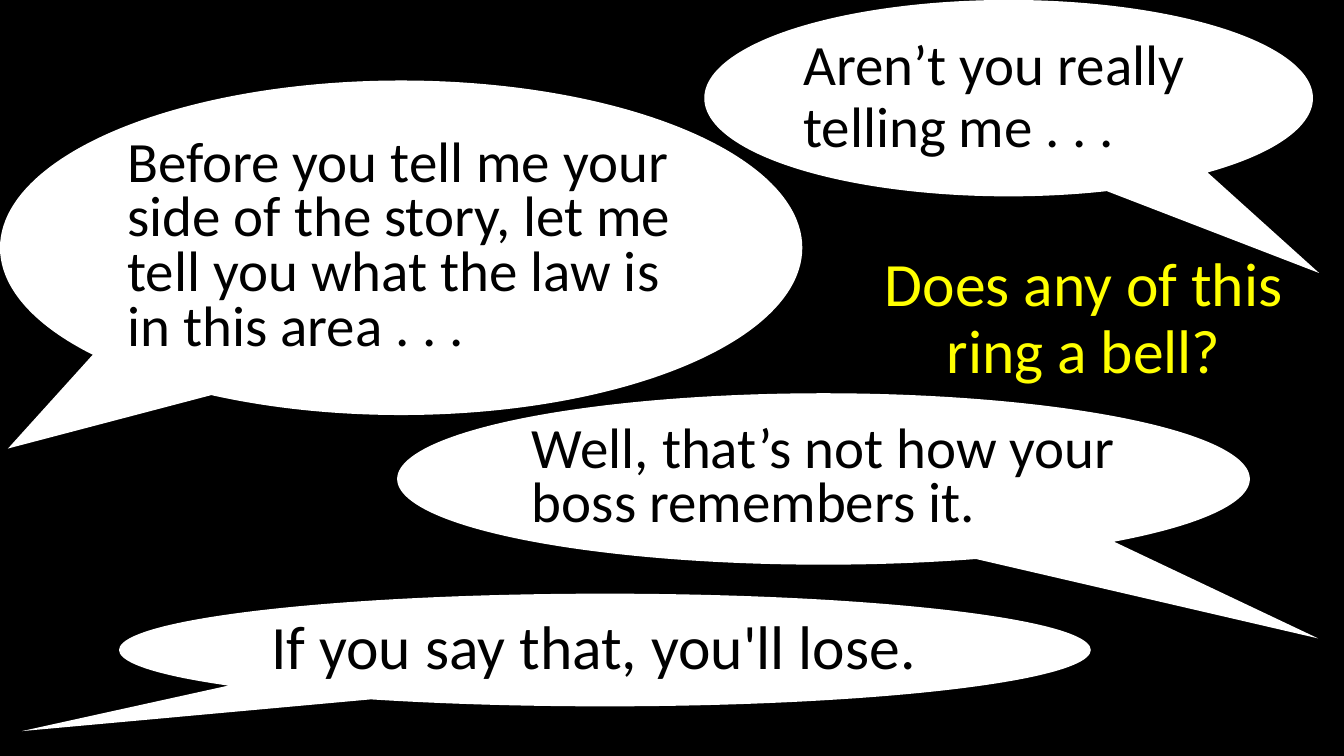
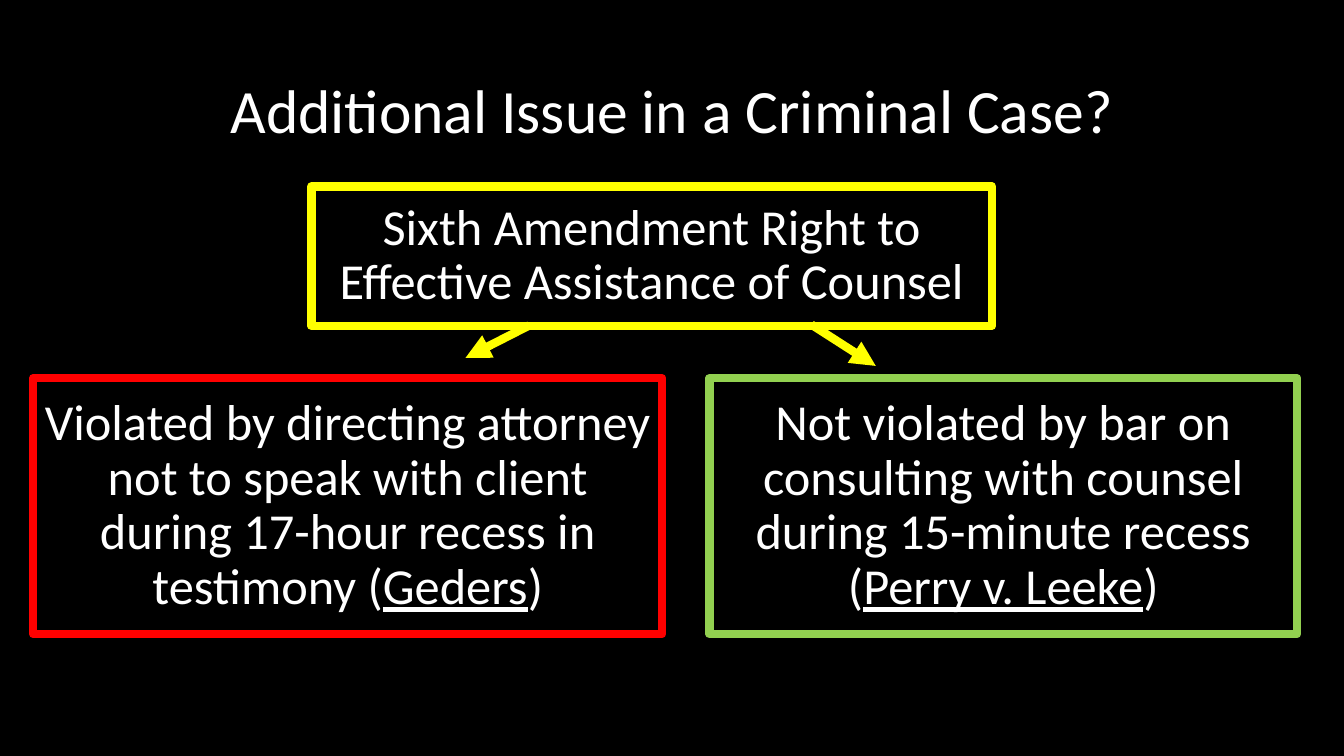
from lxml import etree
from pptx import Presentation
from pptx.dml.color import RGBColor
from pptx.enum.shapes import MSO_CONNECTOR as LINE, MSO_SHAPE as SHAPE
from pptx.enum.text import MSO_ANCHOR as ANCHOR, PP_ALIGN as ALIGN
from pptx.oxml.ns import qn
from pptx.util import Cm, Pt

BLACK = RGBColor(0x00, 0x00, 0x00)
WHITE = RGBColor(0xFF, 0xFF, 0xFF)
YELLOW = RGBColor(0xFF, 0xFF, 0x00)
RED = RGBColor(0xFF, 0x00, 0x00)
GREEN = RGBColor(0x92, 0xD0, 0x50)
FONT = "Calibri"
BORDER = Pt(6)

# Content: places are left, top, width, height in cm
BELL = ("Does any of this ring a bell?", (21.69, 6.22, 11.25, 3.68), YELLOW)
ISSUE = ("Additional Issue in a Criminal Case?", (2.34, 1.02, 29.21, 3.68), WHITE)

# Text, place, tail tip, font size, line spacing
BUBBLES = [
    ("Before you tell me your side of the story, let me tell you what "
     "the law is in this area . . .",
     (0, 2.03, 20.22, 8.43), (-0.49, 0.6), 40.7, 0.8),
    ("If you say that, you'll lose.",
     (3, 14.96, 24.49, 2.84), (-0.6, 0.72), 44, 0.9),
    ("Well, that’s not how your boss remembers it.",
     (10.01, 9.91, 21.49, 4.32), (0.58, 0.93), 40.7, 0.8),
    ("Aren’t you really telling me . . .",
     (17.75, 0, 15.34, 4.95), (0.51, 0.89), 40.7, 0.9),
]

# Text runs (every second one is a case name), place, border colour
BOXES = [
    (["Sixth Amendment Right to Effective Assistance of Counsel"],
     (7.85, 4.7, 17.15, 3.51), YELLOW),
    (["Violated by directing attorney not to speak with client during "
      "17-hour recess in testimony (", "Geders", ")"],
     (0.84, 9.53, 15.85, 6.45), RED),
    (["Not violated by bar on consulting with counsel during 15-minute "
      "recess (", "Perry v. Leeke", ")"],
     (17.88, 9.53, 14.81, 6.45), GREEN),
]

# Start x, y and end x, y in cm
ARROWS = [(13.34, 8.2, 11.73, 9.02), (20.45, 8.18, 22.07, 9.22)]


def cms(nums):
    return [Cm(num) for num in nums]


def write(shape, runs, size, color, align, space=0.9, before=0):
    frame = shape.text_frame
    frame.word_wrap = True
    frame.vertical_anchor = ANCHOR.MIDDLE
    para = frame.paragraphs[0]
    para.alignment = align
    para.line_spacing = space
    para.space_before = Pt(before)
    para.font.name = FONT
    para.font.size = Pt(size)
    para.font.color.rgb = color
    for i, text in enumerate(runs):
        run = para.add_run()
        run.text = text
        if i % 2:
            run.font.underline = True


def add_slide(deck, title):
    text, place, color = title
    slide = deck.slides.add_slide(deck.slide_layouts[6])
    slide.background.fill.solid()
    slide.background.fill.fore_color.rgb = BLACK
    write(slide.shapes.add_textbox(*cms(place)), [text], 44, color, ALIGN.CENTER)
    return slide


def add_bubble(slide, text, place, tip, size, space):
    shape = slide.shapes.add_shape(SHAPE.OVAL_CALLOUT, *cms(place))
    shape.shadow.inherit = False
    shape.adjustments[0], shape.adjustments[1] = tip
    shape.fill.solid()
    shape.fill.fore_color.rgb = WHITE
    shape.line.fill.background()
    write(shape, [text], size, BLACK, ALIGN.LEFT, space, 10)


def add_box(slide, runs, place, color):
    shape = slide.shapes.add_shape(SHAPE.RECTANGLE, *cms(place))
    shape.shadow.inherit = False
    shape.fill.background()
    shape.line.color.rgb = color
    shape.line.width = BORDER
    write(shape, runs, 36, WHITE, ALIGN.CENTER, before=10)


def add_arrow(slide, ends):
    arrow = slide.shapes.add_connector(LINE.STRAIGHT, *cms(ends))
    arrow.line.color.rgb = YELLOW
    arrow.line.width = BORDER
    # Arrowhead at the end, no shadow
    props = arrow.element.spPr
    etree.SubElement(props.find(qn("a:ln")), qn("a:tailEnd"), type="triangle")
    etree.SubElement(props, qn("a:effectLst"))


def main():
    deck = Presentation()
    deck.slide_width, deck.slide_height = cms((33.87, 19.05))

    # Speech bubbles
    slide = add_slide(deck, BELL)
    for bubble in BUBBLES:
        add_bubble(slide, *bubble)

    # Right to counsel and its two outcomes
    slide = add_slide(deck, ISSUE)
    for box in BOXES:
        add_box(slide, *box)
    for ends in ARROWS:
        add_arrow(slide, ends)

    deck.save("out.pptx")


if __name__ == "__main__":
    main()
